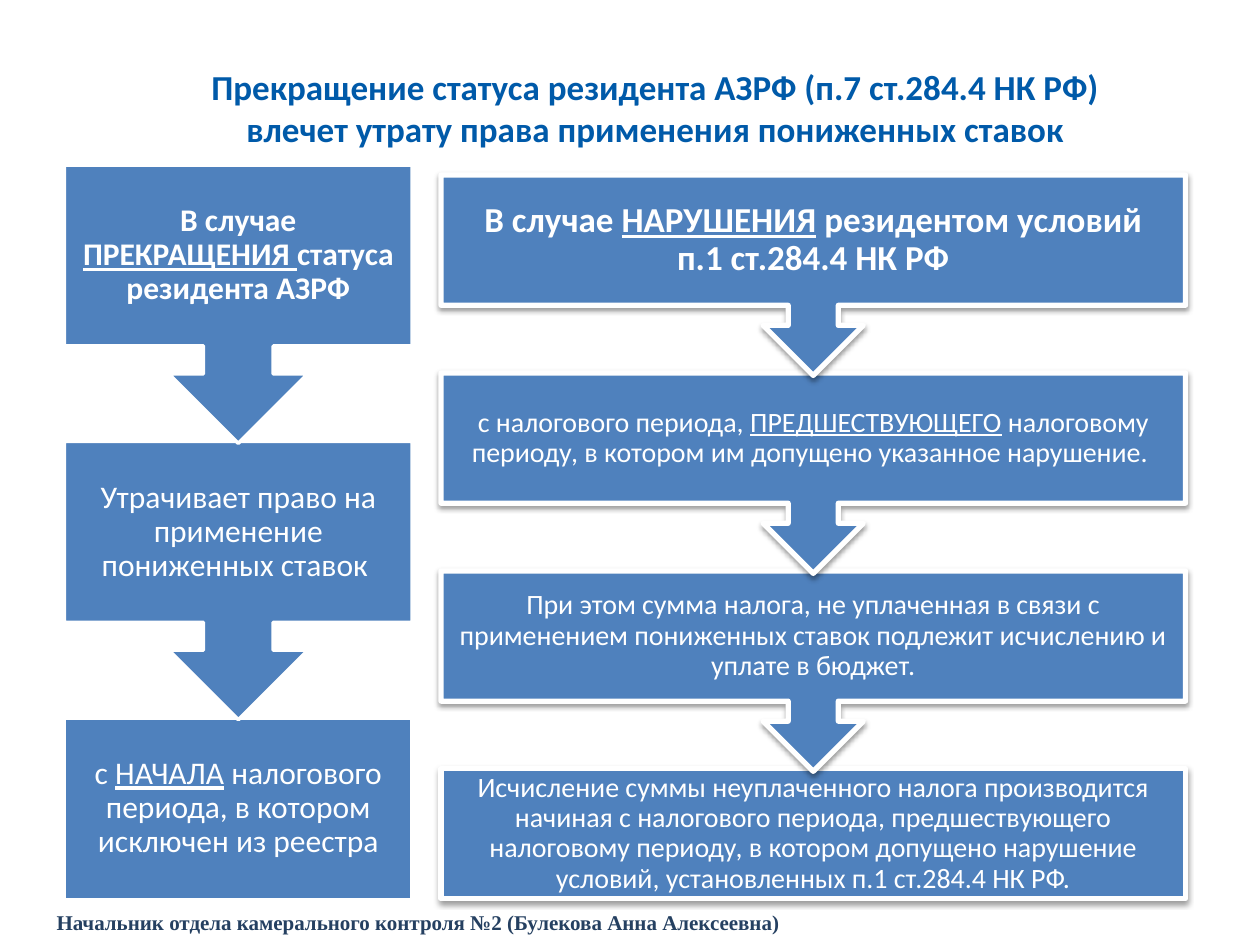
from dataclasses import dataclass

from lxml import etree
from pptx import Presentation
from pptx import util as u
from pptx.dml.color import RGBColor
from pptx.enum import shapes, text
from pptx.oxml.ns import qn


@dataclass(frozen=True)
class Theme:
    font: str = "Calibri"
    footer_font: str = "Times New Roman"
    box: str = "4F81BD"
    white: str = "FFFFFF"
    title: str = "005AA9"
    footer: str = "254061"
    title_size: float = 20
    footer_size: float = 12


@dataclass(frozen=True)
class Step:
    words: str  # underscores enclose underlined words
    size: float
    inset: float
    bold: bool = False


@dataclass(frozen=True)
class Flow:
    left: float
    top: float
    width: float
    box_height: float
    callout_height: float
    pitch: float
    line: float
    shadow: bool
    steps: tuple[Step, ...]


THEME = Theme()

FLOWS = (
    Flow(1.3, 3.33, 7.01, 3.66, 5.61, 5.57, 2, False, (
        Step("В случае _ПРЕКРАЩЕНИЯ _статуса резидента АЗРФ", 18, 0.36, True),
        Step("Утрачивает право на применение пониженных ставок ", 18, 0.36),
        Step("с _НАЧАЛА_ налогового периода, в котором исключен из реестра", 18, 0.36),
    )),
    Flow(8.89, 3.53, 15.01, 2.62, 4.04, 3.99, 3, True, (
        Step("В случае _НАРУШЕНИЯ_ резидентом условий п.1 ст.284.4 НК РФ", 20, 0.4, True),
        Step("с налогового периода, _ПРЕДШЕСТВУЮЩЕГО_ налоговому периоду, "
             "в котором им допущено указанное нарушение. ", 16, 0.3),
        Step("При этом сумма налога, не уплаченная в связи с применением "
             "пониженных ставок подлежит исчислению и уплате в бюджет.", 16, 0.3),
        Step("Исчисление суммы неуплаченного налога производится начиная с "
             "налогового периода, предшествующего налоговому периоду, в котором "
             "допущено нарушение условий, установленных п.1 ст.284.4 НК РФ.", 16, 0.3),
    )),
)


def write(sp, words: str, *, size: float, color: str, font: str = THEME.font,
          bold: bool = False, align=text.PP_ALIGN.CENTER, spacing: float = 0.9,
          inset_x: float = 0.25, inset_y: float = 0.13) -> None:
    """Fill a shape with one paragraph; underscores switch underlining."""
    tf = sp.text_frame
    tf.word_wrap = True
    tf.vertical_anchor = text.MSO_ANCHOR.MIDDLE
    tf.margin_left = tf.margin_right = u.Cm(inset_x)
    tf.margin_top = tf.margin_bottom = u.Cm(inset_y)
    p = tf.paragraphs[0]
    p.alignment = align
    p.line_spacing = spacing
    for row, line in enumerate(words.split("\n")):
        if row:
            p.add_line_break()
        for i, part in enumerate(line.split("_")):
            r = p.add_run()
            r.text = part
            r.font.name = font
            r.font.size = u.Pt(size)
            r.font.bold = bold
            r.font.underline = i % 2 == 1
            r.font.color.rgb = RGBColor.from_string(color)


def add_shadow(sp) -> None:
    """Soft black shadow falling straight down."""
    effects = sp._element.spPr.find(qn("a:effectLst"))
    outer = etree.SubElement(effects, qn("a:outerShdw"), blurRad=str(u.Pt(3.1)),
                             dist=str(u.Pt(1.6)), dir="5400000", rotWithShape="0")
    color = etree.SubElement(outer, qn("a:srgbClr"), val="000000")
    etree.SubElement(color, qn("a:alpha"), val="38000")


def add_flow(s, flow: Flow) -> None:
    """Draw from the bottom up so each arrow tip lies over the next box."""
    last = len(flow.steps) - 1
    for i, step in reversed(list(enumerate(flow.steps))):
        if i == last:
            kind, height = shapes.MSO_SHAPE.RECTANGLE, flow.box_height
        else:
            kind, height = shapes.MSO_SHAPE.DOWN_ARROW_CALLOUT, flow.callout_height
        sp = s.shapes.add_shape(kind, u.Cm(flow.left), u.Cm(flow.top + i * flow.pitch),
                                u.Cm(flow.width), u.Cm(height))
        sp.fill.solid()
        sp.fill.fore_color.rgb = RGBColor.from_string(THEME.box)
        sp.line.color.rgb = RGBColor.from_string(THEME.white)
        sp.line.width = u.Pt(flow.line)
        sp.shadow.inherit = False
        if flow.shadow:
            add_shadow(sp)
        write(sp, step.words, size=step.size, color=THEME.white, bold=step.bold,
              inset_x=step.inset, inset_y=step.inset)


def main() -> None:
    prs = Presentation()
    prs.slide_width, prs.slide_height = u.Cm(25.4), u.Cm(19.05)
    s = prs.slides.add_slide(prs.slide_layouts[6])

    # Title
    title = s.shapes.add_textbox(u.Cm(2.29), u.Cm(1.4), u.Cm(21.84), u.Cm(1.52))
    write(title, "Прекращение статуса резидента АЗРФ (п.7 ст.284.4 НК РФ)\n"
                 "влечет утрату права применения пониженных ставок",
          size=THEME.title_size, color=THEME.title, bold=True, spacing=1.0)

    # Two chains of steps
    for flow in FLOWS:
        add_flow(s, flow)

    # Footer
    footer = s.shapes.add_textbox(u.Cm(0.89), u.Cm(18.31), u.Cm(22.81), u.Cm(0.64))
    write(footer, "Начальник отдела камерального контроля №2 (Булекова Анна Алексеевна)",
          size=THEME.footer_size, color=THEME.footer, font=THEME.footer_font,
          bold=True, align=text.PP_ALIGN.LEFT)

    prs.save("out.pptx")


if __name__ == "__main__":
    main()
